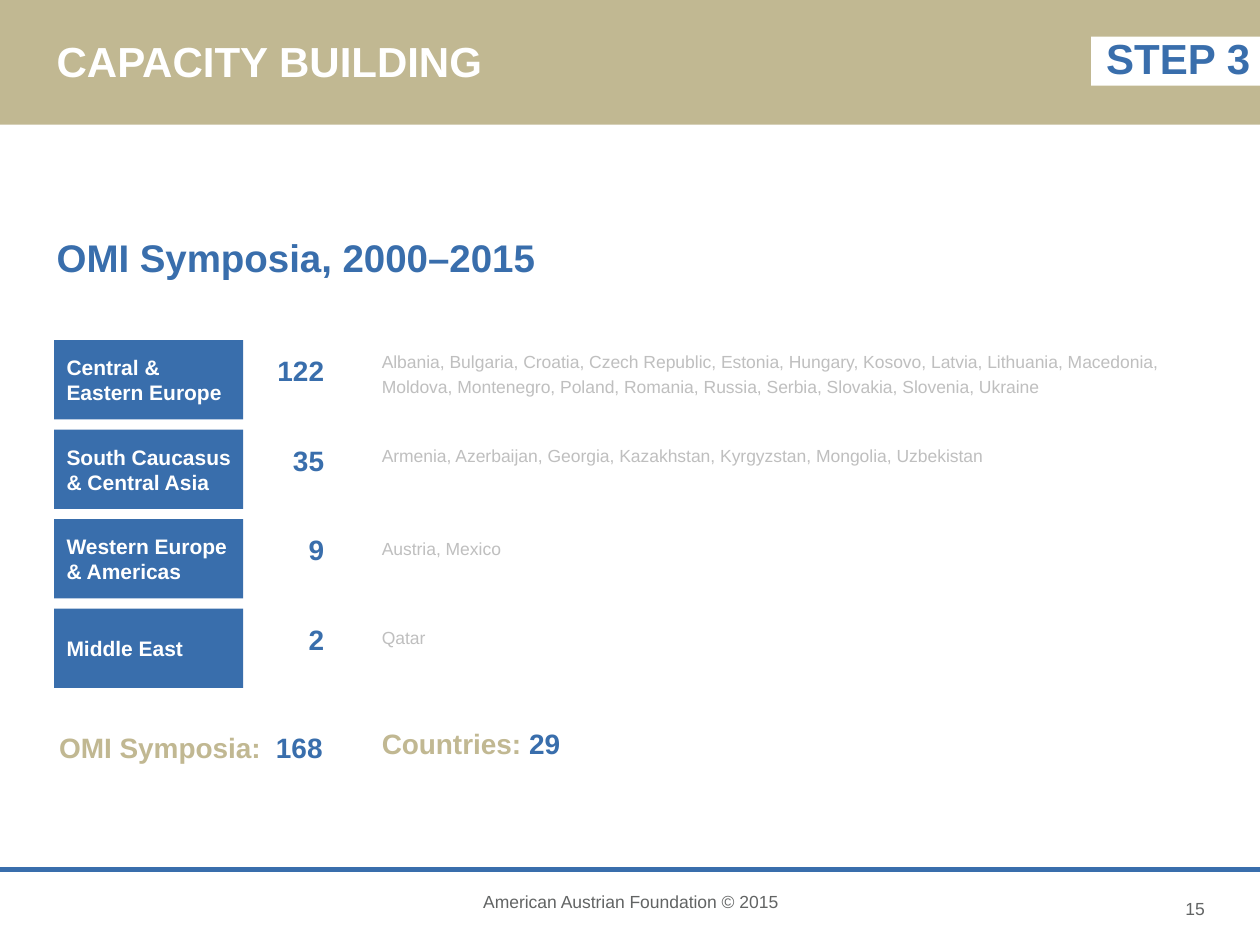
from pptx import Presentation
from pptx.dml.color import RGBColor
from pptx.enum.shapes import MSO_CONNECTOR, MSO_SHAPE
from pptx.enum.text import MSO_ANCHOR, PP_ALIGN
from pptx.oxml.ns import qn
from pptx.util import Inches, Pt
from lxml import etree

RECT = MSO_SHAPE.RECTANGLE
LINE = MSO_CONNECTOR.STRAIGHT
LEFT, CENTER, RIGHT = PP_ALIGN.LEFT, PP_ALIGN.CENTER, PP_ALIGN.RIGHT
TOP, MIDDLE = MSO_ANCHOR.TOP, MSO_ANCHOR.MIDDLE

# Colours and font
BLUE, SAND, WHITE = "396EAC", "C1B892", "FFFFFF"
GREY, PALE = "626464", "BFBFBF"
FONT = "Arial"

# Content: region lines, symposia, countries, top of the countries, line spacing
ROWS = [
    (["Central &", "Eastern Europe"], "122",
     "Albania, Bulgaria, Croatia, Czech Republic, Estonia, Hungary, Kosovo, "
     "Latvia, Lithuania, Macedonia, Moldova, Montenegro, Poland, Romania, "
     "Russia, Serbia, Slovakia, Slovenia, Ukraine", 2.7, 1.2),
    (["South Caucasus & Central Asia"], "35",
     "Armenia, Azerbaijan, Georgia, Kazakhstan, Kyrgyzstan, Mongolia, "
     "Uzbekistan", 3.48, 1),
    (["Western Europe", "& Americas"], "9", "Austria, Mexico", 4.22, 1),
    (["Middle East"], "2", "Qatar", 4.93, 1),
]

# Row grid
ROW_TOP, ROW_STEP = 2.7, 0.71
TILE_X, TILE_W, TILE_H = 0.43, 1.5, 0.63
LIST_X, LIST_W = 3.03, 6.38

deck = Presentation()
deck.slide_width, deck.slide_height = Inches(10), Inches(7.5)
slide = deck.slides.add_slide(deck.slide_layouts[6])


def color(code):
    return RGBColor.from_string(code)


def add_rect(x, y, w, h, fill):
    shape = slide.shapes.add_shape(RECT, Inches(x), Inches(y), Inches(w), Inches(h))
    shape.shadow.inherit = False
    shape.fill.solid()
    shape.fill.fore_color.rgb = color(fill)
    shape.line.fill.background()
    return shape


def add_text(lines, x, y, w, h, size=16, ink=BLUE, bold=True, align=LEFT,
             anchor=TOP, inset=(0.1, 0.05, 0.1, 0.05), spacing=None, fill=None):
    """Each line is a string or a list of (text, colour) runs."""
    if fill:
        box = add_rect(x, y, w, h, fill)
    else:
        box = slide.shapes.add_textbox(Inches(x), Inches(y), Inches(w), Inches(h))
    frame = box.text_frame
    frame.word_wrap = True
    frame.vertical_anchor = anchor
    (frame.margin_left, frame.margin_top,
     frame.margin_right, frame.margin_bottom) = map(Inches, inset)
    for i, line in enumerate(lines):
        para = frame.add_paragraph() if i else frame.paragraphs[0]
        para.alignment = align
        if spacing:
            para.line_spacing = spacing
        for text, tint in [(line, ink)] if isinstance(line, str) else line:
            run = para.add_run()
            run.text = text
            run.font.name, run.font.size, run.font.bold = FONT, Pt(size), bold
            run.font.color.rgb = color(tint)


FLUSH = (0, 0, 0, 0)
SIDES = (0, 0.05, 0, 0.05)

# Header band and footer
add_rect(0, -0.03, 10, 1.02, SAND)
rule = slide.shapes.add_connector(LINE, 0, Inches(6.9), Inches(10), Inches(6.9))
rule.line.color.rgb = color(BLUE)
rule.line.width = Pt(3.25)
etree.SubElement(rule._element.spPr, qn("a:effectLst"))
add_text(["American Austrian Foundation © 2015"], 3.42, 7.02, 3.17, 0.5,
         size=10, ink=GREY, bold=False, align=CENTER)
add_text(["15"], 7.58, 7.08, 2.08, 0.5, size=10, ink=GREY, bold=False, align=RIGHT)

# Titles
add_text(["CAPACITY BUILDING"], 0.45, 0.34, 9.57, 0.35, size=24, ink=WHITE,
         anchor=MIDDLE, inset=(0, 0, 0.1, 0), spacing=0.85)
add_text(["OMI Symposia, 2000–2015"], 0.45, 1.86, 8.96, 0.37, size=22, inset=FLUSH)

# Regions
for i, (region, count, lands, land_y, spacing) in enumerate(ROWS):
    y = ROW_TOP + i * ROW_STEP
    add_rect(TILE_X, y, TILE_W, TILE_H, BLUE)
    add_text(region, TILE_X, y, 1.57, TILE_H, size=12, ink=WHITE, anchor=MIDDLE)
    add_text([lands], LIST_X, land_y, LIST_W, 0.5 if i == 0 else 0.27, size=10,
             ink=PALE, bold=False, inset=(0, 0.05, 0.1, 0.05), spacing=spacing,
             fill=WHITE)
    add_text([count], 1.73, y + 0.06, 0.94, 0.37, align=RIGHT)

# Totals
add_text(["OMI Symposia:"], 0.47, 5.8, 2.4, 0.27, ink=SAND, inset=FLUSH)
add_text(["168"], 2.19, 5.8, 0.52, 0.27, inset=FLUSH)
add_text([[("Countries: ", SAND), ("29", BLUE)]], LIST_X, 5.72, 2.12, 0.37, inset=SIDES)

# Step tag
add_rect(8.66, 0.29, 1.34, 0.39, WHITE)
add_text(["STEP 3"], 8.78, 0.21, 1.26, 0.5, size=24, inset=SIDES)

deck.save("out.pptx")
